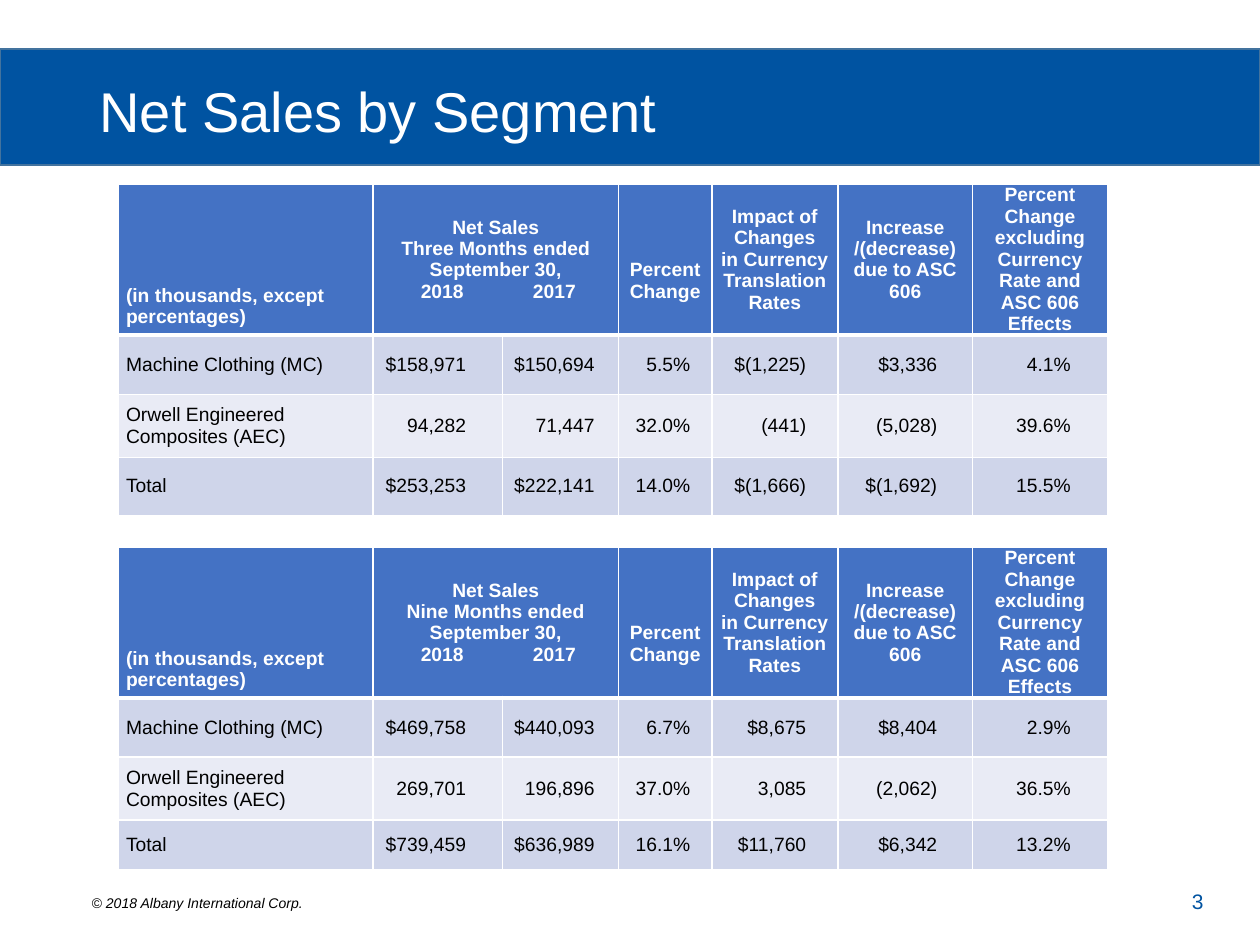
from dataclasses import dataclass

from lxml import etree
from pptx import Presentation
from pptx import util as u
from pptx.dml.color import RGBColor
from pptx.enum import shapes, text
from pptx.oxml import ns

HUES = {
    "band": "0053A1", "edge": "43739E", "head": "4472C4", "odd": "CFD5EA",
    "even": "E9EBF5", "white": "FFFFFF", "black": "000000",
}
WIDTHS = (2.02, 1.03, 0.92, 0.74, 1, 1.07, 1.07)
# Right margins that line up the figures in each column
PADS = (0.06, 0.29, 0.19, 0.17, 0.25, 0.28, 0.29)
SIDE = 0.06
NAMES = ("Machine Clothing (MC)", "Orwell Engineered Composites (AEC)", "Total")
ALIGN, ANCHOR = text.PP_ALIGN, text.MSO_ANCHOR


@dataclass
class Report:
    top: float
    period: str
    heights: tuple[float, ...]
    rows: tuple[tuple[str, ...], ...]


REPORTS = (
    Report(1.46, "Three", (1.2, 0.47, 0.5, 0.46), (
        ("$158,971", "$150,694", "5.5%", "$(1,225)", "$3,336", "4.1%"),
        ("94,282", "71,447", "32.0%", "(441)", "(5,028)", "39.6%"),
        ("$253,253", "$222,141", "14.0%", "$(1,666)", "$(1,692)", "15.5%"),
    )),
    Report(4.34, "Nine", (1.2, 0.47, 0.5, 0.39), (
        ("$469,758", "$440,093", "6.7%", "$8,675", "$8,404", "2.9%"),
        ("269,701", "196,896", "37.0%", "3,085", "(2,062)", "36.5%"),
        ("$739,459", "$636,989", "16.1%", "$11,760", "$6,342", "13.2%"),
    )),
)


def hue(name: str) -> RGBColor:
    return RGBColor.from_string(HUES[name])


def style(para, size: float, color: str, bold=False, slant=False) -> None:
    font = para.font
    font.name, font.size = "Arial", u.Pt(size)
    font.bold, font.italic = bold, slant
    font.color.rgb = hue(color)


def rule(cell, side: str, points: float) -> None:
    """Draw one white edge of a cell."""
    props = cell._tc.get_or_add_tcPr()
    line = etree.SubElement(props, ns.qn(f"a:ln{side}"), w=str(u.Pt(points)))
    fill = etree.SubElement(line, ns.qn("a:solidFill"))
    etree.SubElement(fill, ns.qn("a:srgbClr"), val=HUES["white"])


def set_tabs(para, stops: tuple[float, ...]) -> None:
    """Add centred tab stops."""
    tabs = etree.SubElement(para._p.get_or_add_pPr(), ns.qn("a:tabLst"))
    for stop in stops:
        etree.SubElement(tabs, ns.qn("a:tab"), pos=str(u.Inches(stop)), algn="ctr")


def fill_cell(cell, words: str, fill: str, align, head=False, first=False,
              right=SIDE) -> None:
    for side in "LRTB":
        thick = (head and side == "B") or (first and side == "T")
        rule(cell, side, 3 if thick else 1)
    cell.fill.solid()
    cell.fill.fore_color.rgb = hue(fill)
    cell.margin_left, cell.margin_right = u.Inches(SIDE), u.Inches(right)
    cell.margin_top = cell.margin_bottom = 0
    cell.vertical_anchor = ANCHOR.MIDDLE
    cell.text = words
    for para in cell.text_frame.paragraphs:
        para.alignment = align
        if "\t" in para.text:
            para.alignment = ALIGN.LEFT
            set_tabs(para, (0.49, 1.38))
        style(para, 11, "white" if head else "black", bold=head)


def add_report(slide, report: Report) -> None:
    table = slide.shapes.add_table(
        len(report.heights), len(WIDTHS), u.Inches(0.94), u.Inches(report.top),
        u.Inches(sum(WIDTHS)), u.Inches(sum(report.heights))).table
    for col, width in zip(table.columns, WIDTHS):
        col.width = u.Inches(width)
    for row, height in zip(table.rows, report.heights):
        row.height = u.Inches(height)

    # Header row
    heads = (
        "(in thousands, except percentages)",
        f"Net Sales\n{report.period} Months ended\nSeptember 30,\n\t2018\t2017",
        "",
        "Percent\nChange",
        "Impact of Changes\nin Currency\nTranslation Rates",
        "Increase /(decrease) due to ASC 606",
        "Percent Change\nexcluding Currency Rate and ASC 606 Effects",
    )
    for col, words in enumerate(heads):
        fill_cell(table.cell(0, col), words, "head",
                  ALIGN.CENTER if col else ALIGN.LEFT, head=True)
    table.cell(0, 1).merge(table.cell(0, 2))
    for col, gap in ((0, 0.06), (3, 0.26)):
        table.cell(0, col).vertical_anchor = ANCHOR.BOTTOM
        table.cell(0, col).margin_bottom = u.Inches(gap)

    # Segment rows
    for row, (name, values) in enumerate(zip(NAMES, report.rows), 1):
        for col, words in enumerate((name, *values)):
            fill_cell(table.cell(row, col), words, "odd" if row % 2 else "even",
                      ALIGN.RIGHT if col else ALIGN.LEFT,
                      first=row == 1, right=PADS[col])


def add_note(slide, box: tuple[float, ...], words: str, size: float, color: str,
             align, slant=False) -> None:
    frame = slide.shapes.add_textbox(*map(u.Inches, box)).text_frame
    frame.word_wrap = True
    frame.vertical_anchor = ANCHOR.MIDDLE
    para = frame.paragraphs[0]
    para.text, para.alignment = words, align
    style(para, size, color, slant=slant)


def main() -> None:
    deck = Presentation()
    deck.slide_width, deck.slide_height = u.Inches(10), u.Inches(7.5)
    slide = deck.slides.add_slide(deck.slide_layouts[5])

    # Title band, placed behind the title
    band = slide.shapes.add_shape(
        shapes.MSO_SHAPE.RECTANGLE, 0, u.Inches(0.39), u.Inches(10), u.Inches(0.92))
    band.shadow.inherit = False
    band.fill.solid()
    band.fill.fore_color.rgb = hue("band")
    band.line.color.rgb, band.line.width = hue("edge"), u.Pt(1)
    slide.shapes.element.insert(2, band.element)

    # Title
    title = slide.shapes.title
    title.left, title.top = u.Inches(0.69), u.Inches(0.18)
    title.width, title.height = u.Inches(8.62), u.Inches(1.45)
    frame = title.text_frame
    frame.text = "Net Sales by Segment"
    frame.vertical_anchor = ANCHOR.MIDDLE
    para = frame.paragraphs[0]
    para.alignment, para.line_spacing = ALIGN.LEFT, 0.9
    style(para, 32, "white")

    # Tables
    for report in REPORTS:
        add_report(slide, report)

    # Footer
    add_note(slide, (0.63, 7.05, 9.07, 0.24), "© 2018 Albany International Corp.",
             8, "black", ALIGN.LEFT, slant=True)
    add_note(slide, (7.06, 6.95, 2.59, 0.4), "3", 12, "band", ALIGN.RIGHT)

    deck.save("out.pptx")


if __name__ == "__main__":
    main()
